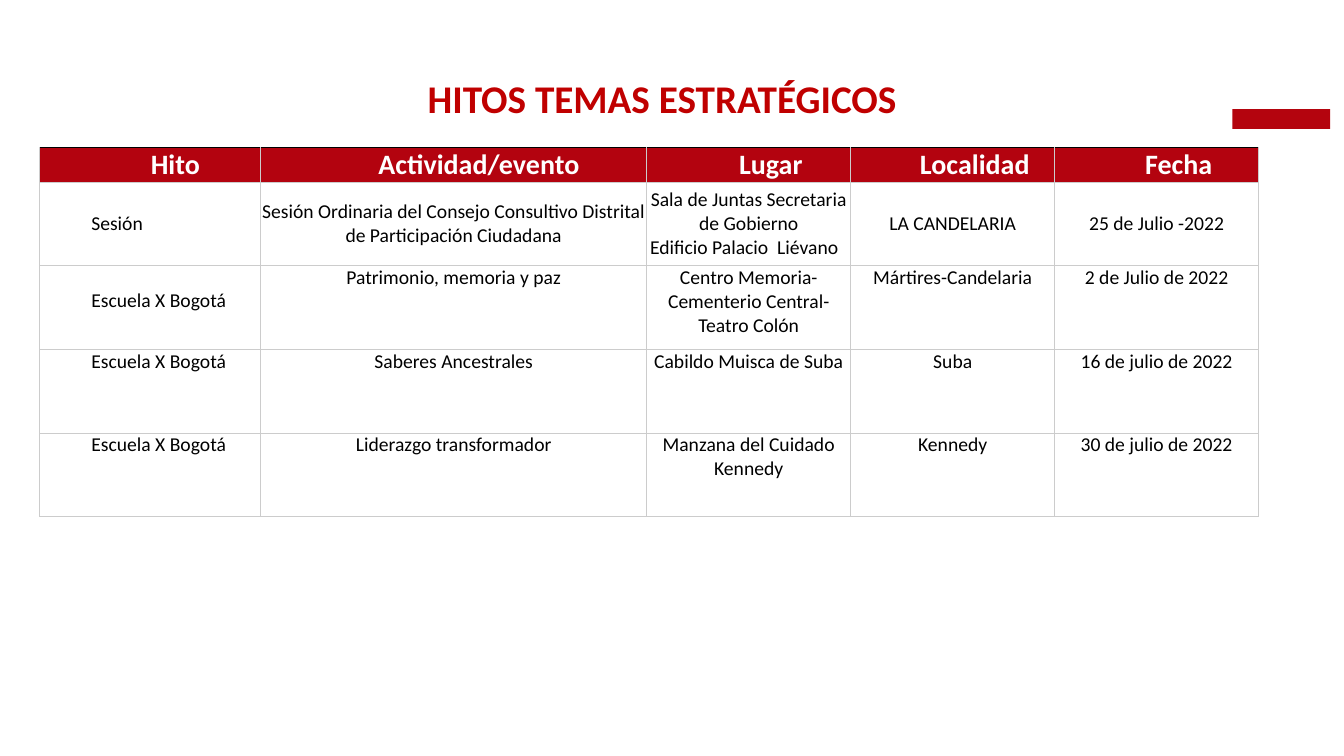
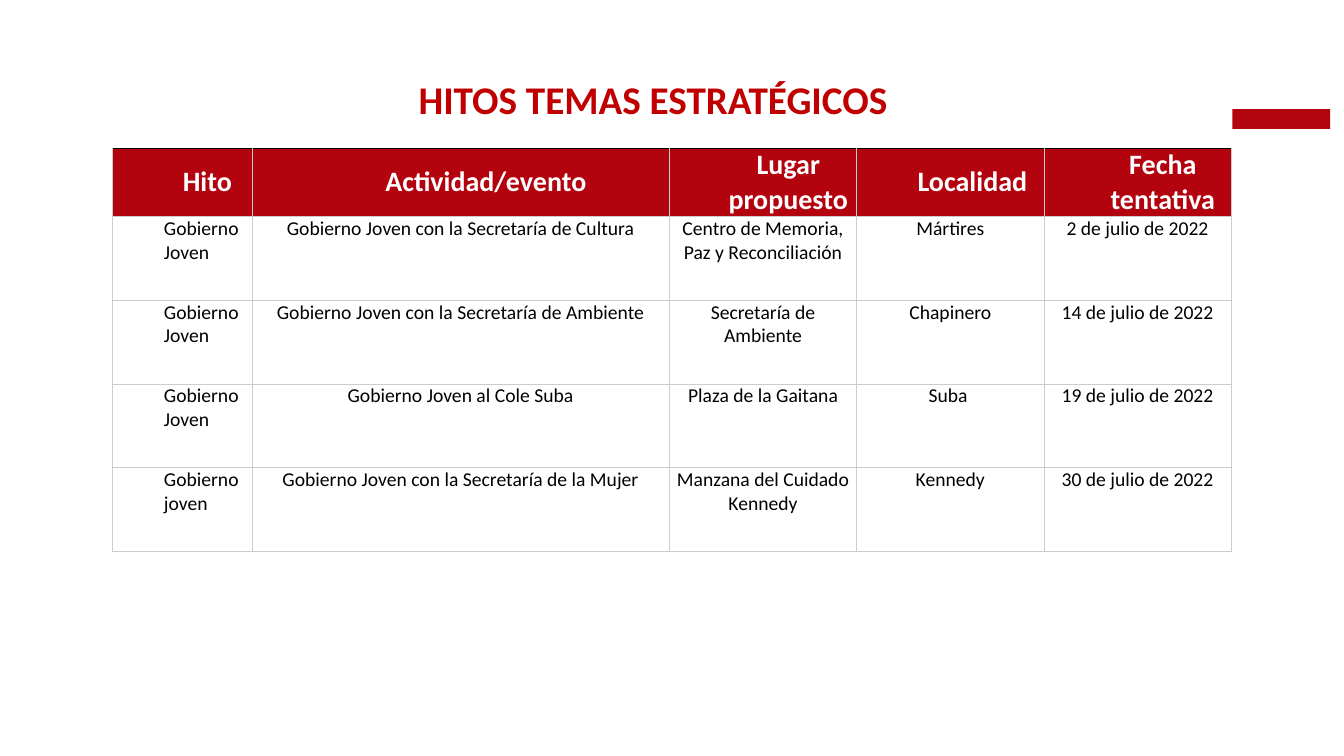
from lxml.etree import SubElement
from pptx import Presentation
from pptx.dml.color import RGBColor as RGB
from pptx.enum.shapes import MSO_SHAPE as Shape
from pptx.enum.text import MSO_ANCHOR as Anchor, MSO_AUTO_SIZE as AutoSize, PP_ALIGN as Align
from pptx.oxml.ns import qn
from pptx.util import Cm, Pt

COLORS = {
    "band": "B4040E",
    "title": "C00000",
    "header": "B3030F",
    "header_text": "FFFFFF",
    "header_top": "000000",
    "cell": "FFFFFF",
    "text": "000000",
    "grid": "CCCCCC",
}
FONT = "Calibri"
TITLE = "HITOS TEMAS ESTRATÉGICOS "
ROW_HEIGHT = 2.11
INDENT = Cm(1.27)

SLIDES = [
    {
        "title_at": (3.51, 1.75),
        "table_at": (1, 3.72),
        "cols": [5.57, 9.73, 5.14, 5.14, 5.14],
        "header_height": 0.85,
        "middle_rows": {1},
        "top_margins": {(2, 0): 0.59},
        "rows": [
            ["Hito", "Actividad/evento", "Lugar ", "Localidad ", "Fecha "],
            ["Sesión",
             "Sesión Ordinaria del Consejo Consultivo Distrital de Participación Ciudadana",
             "Sala de Juntas Secretaria de Gobierno\nEdificio Palacio  Liévano  ",
             "LA CANDELARIA", "25 de Julio -2022"],
            ["Escuela X Bogotá", "Patrimonio, memoria y paz",
             "Centro Memoria- Cementerio Central-Teatro Colón",
             "Mártires-Candelaria", "2 de Julio de 2022"],
            ["Escuela X Bogotá", "Saberes Ancestrales", "Cabildo Muisca de Suba",
             "Suba", "16 de julio de 2022"],
            ["Escuela X Bogotá", "Liderazgo transformador",
             "Manzana del Cuidado Kennedy", "Kennedy", "30 de julio de 2022"],
        ],
    },
    {
        "title_at": (3.28, 1.78),
        "table_at": (2.83, 3.73),
        "cols": [3.52, 10.52, 4.72, 4.72, 4.72],
        "header_height": 1.7,
        "middle_rows": set(),
        "top_margins": {},
        "rows": [
            ["Hito", "Actividad/evento", "Lugar propuesto", "Localidad ", "Fecha tentativa"],
            ["Gobierno Joven", "Gobierno Joven con la Secretaría de Cultura",
             "Centro de Memoria, Paz y Reconciliación", "Mártires", "2 de julio de 2022"],
            ["Gobierno Joven", "Gobierno Joven con la Secretaría de Ambiente",
             "Secretaría de Ambiente", "Chapinero", "14 de julio de 2022"],
            ["Gobierno Joven ", "Gobierno Joven al Cole Suba",
             "Plaza de la Gaitana", "Suba ", "19 de julio de 2022"],
            ["Gobierno joven", "Gobierno Joven con la Secretaría de la Mujer",
             "Manzana del Cuidado Kennedy", "Kennedy", "30 de julio de 2022"],
        ],
    },
]


def color(name):
    return RGB.from_string(COLORS[name])


def add_run(p, text, size, color_name, bold):
    r = p.add_run()
    r.text = text
    r.font.name = FONT
    r.font.size = Pt(size)
    r.font.bold = bold
    r.font.color.rgb = color(color_name)


def add_band(s, left=31.06, top=2.75, width=2.46, height=0.5):
    sp = s.shapes.add_shape(Shape.RECTANGLE, Cm(left), Cm(top), Cm(width), Cm(height))
    sp.shadow.inherit = False
    sp.fill.solid()
    sp.fill.fore_color.rgb = color("band")
    sp.line.fill.background()


def set_title(s, left, top, width=26.57, height=1.45):
    sp = s.shapes.title
    sp.left, sp.top, sp.width, sp.height = Cm(left), Cm(top), Cm(width), Cm(height)
    tf = sp.text_frame
    tf.word_wrap = True
    tf.auto_size = AutoSize.NONE
    tf.vertical_anchor = Anchor.TOP
    p = tf.paragraphs[0]
    p.alignment = Align.CENTER
    add_run(p, TITLE, 28, "title", True)


def set_borders(cell, top):
    tcPr = cell._tc.get_or_add_tcPr()
    for side, name in (("L", "grid"), ("R", "grid"), ("T", top), ("B", "grid")):
        ln = SubElement(tcPr, qn(f"a:ln{side}"), w=str(Pt(0.75)))
        fill = SubElement(ln, qn("a:solidFill"))
        SubElement(fill, qn("a:srgbClr"), val=COLORS[name])


def fill_cell(cell, text, header, first_col, middle, margin_top):
    set_borders(cell, "header_top" if header else "grid")
    cell.fill.solid()
    cell.fill.fore_color.rgb = color("header" if header else "cell")
    cell.margin_left = cell.margin_right = Cm(0.03)
    cell.margin_top, cell.margin_bottom = Cm(margin_top), 0
    cell.vertical_anchor = Anchor.MIDDLE if middle else Anchor.TOP
    tf = cell.text_frame
    for i, line in enumerate(text.split("\n")):
        p = tf.add_paragraph() if i else tf.paragraphs[0]
        p.alignment = Align.LEFT if first_col and not header else Align.CENTER
        if header or first_col:
            p.level = 1
            pPr = p._p.get_or_add_pPr()
            pPr.set("marL", str(INDENT))
            pPr.set("indent", "0")
        if header:
            add_run(p, line, 20, "header_text", True)
        else:
            add_run(p, line, 14, "text", False)


def add_milestone_table(s, left, top, data):
    rows, cols = data["rows"], data["cols"]
    heights = [data["header_height"]] + [ROW_HEIGHT] * (len(rows) - 1)
    table = s.shapes.add_table(len(rows), len(cols), Cm(left), Cm(top),
                               Cm(sum(cols)), Cm(sum(heights))).table
    table.first_row = table.horz_banding = False
    for col, width in zip(table.columns, cols):
        col.width = Cm(width)
    for i, (row, height) in enumerate(zip(table.rows, heights)):
        row.height = Cm(height)
        for j, text in enumerate(rows[i]):
            fill_cell(table.cell(i, j), text, header=i == 0, first_col=j == 0,
                      middle=i == 0 or i in data["middle_rows"],
                      margin_top=data["top_margins"].get((i, j), 0))


def add_milestone_slide(prs, data):
    s = prs.slides.add_slide(prs.slide_layouts[5])
    add_band(s)
    set_title(s, *data["title_at"])
    add_milestone_table(s, *data["table_at"], data)


def main():
    prs = Presentation()
    prs.slide_width, prs.slide_height = Cm(33.87), Cm(19.05)
    for data in SLIDES:
        add_milestone_slide(prs, data)
    prs.save("out.pptx")


if __name__ == "__main__":
    main()
